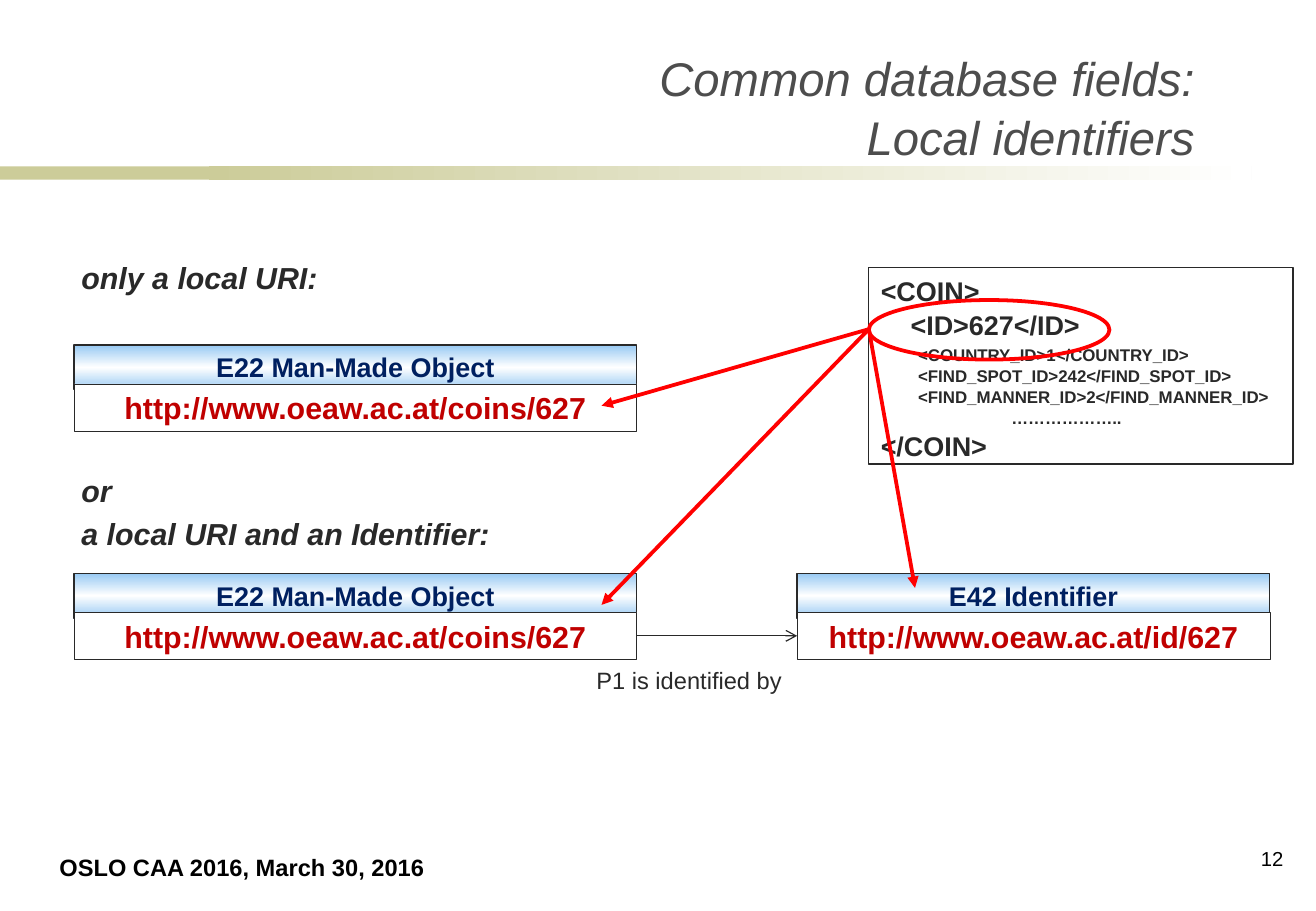
from copy import deepcopy

from pptx import Presentation, util as u
from pptx.dml.color import RGBColor
from pptx.enum import shapes, text
from pptx.oxml import ns, xmlchemy as xml

HUES = {"ink": "292929", "title": "4D4D4D", "black": "000000", "navy": "002060",
        "link": "C00000", "red": "FF0000", "sand": "CCCC99", "sky": "97C9F3",
        "white": "FFFFFF"}
HUES = {name: RGBColor.from_string(code) for name, code in HUES.items()}
SIDES = {"left": text.PP_ALIGN.LEFT, "right": text.PP_ALIGN.RIGHT,
         "mid": text.PP_ALIGN.CENTER}
TOP, MIDDLE, BOTTOM = (text.MSO_ANCHOR.TOP, text.MSO_ANCHOR.MIDDLE,
                       text.MSO_ANCHOR.BOTTOM)


def write(shape, lines, size, hue="ink", bold=False, slant=False, side="left",
          anchor=TOP, wrap=True, pitch=None, gaps=None):
    """Fill a shape with one paragraph per line; size may be a list."""
    frame = shape.text_frame
    frame.word_wrap = wrap
    frame.auto_size = text.MSO_AUTO_SIZE.NONE
    frame.vertical_anchor = anchor
    sizes = size if isinstance(size, list) else [size] * len(lines)
    gaps = gaps or [0] * len(lines)
    for i, line in enumerate(lines):
        para = frame.paragraphs[0] if i == 0 else frame.add_paragraph()
        para.alignment = SIDES[side]
        para.space_before = u.Pt(gaps[i])
        if pitch:
            para.line_spacing = pitch
        run = para.add_run()
        run.text = line
        run.font.name = "Arial"
        run.font.size = u.Pt(sizes[i])
        run.font.bold, run.font.italic = bold, slant
        run.font.color.rgb = HUES[hue]


def draw(kind, area, fills=(), line=None, weight=0.75, angle=0):
    """Add a shape with no fill, one plain fill, or a two-stop blend."""
    shape = slide.shapes.add_shape(kind, *map(u.Inches, area))
    shape.shadow.inherit = False
    if len(fills) == 2:
        shape.fill.gradient()
        shape.fill.gradient_angle = angle
        for stop, hue in zip(shape.fill.gradient_stops, fills):
            stop.color.rgb = HUES[hue]
    elif fills:
        shape.fill.solid()
        shape.fill.fore_color.rgb = HUES[fills[0]]
    else:
        shape.fill.background()
    if line:
        shape.line.color.rgb = HUES[line]
        shape.line.width = u.Pt(weight)
    else:
        shape.line.fill.background()
    return shape


deck = Presentation()
deck.slide_width, deck.slide_height = u.Inches(10.83), u.Inches(7.5)
slide = deck.slides.add_slide(deck.slide_layouts[1])
RECT, OVAL = shapes.MSO_SHAPE.RECTANGLE, shapes.MSO_SHAPE.OVAL

# Header band
draw(RECT, (0, 1.37, 2.53, 0.11), ["sand"])
draw(RECT, (1.72, 1.37, 8.58, 0.11), ["sand", "white"])

# Title and body
title, body = slide.placeholders
for holder, area in ((title, (2.11, 0.13, 7.82, 1.28)),
                     (body, (0.57, 2.08, 10.12, 4.74))):
    holder.left, holder.top, holder.width, holder.height = map(u.Inches, area)
write(title, ["Common database fields:", "Local identifiers"], 28, "title",
      slant=True, side="right", anchor=BOTTOM, pitch=1.04)
write(body, ["only a local URI:", "or", "a local URI and an Identifier:"], 18,
      bold=True, slant=True, gaps=[0, 105, 4])
for para in body.text_frame.paragraphs:
    props = para._p.get_or_add_pPr()
    props.set("marL", "0")
    props.set("indent", "0")
    props.append(xml.OxmlElement("a:buNone"))

# Plain labels
labels = [
    ((0.39, 6.97, 3.22, 0.34), "OSLO CAA 2016, March 30, 2016",
     dict(size=14, hue="black", bold=True, wrap=False)),
    ((10.17, 6.92, 0.49, 0.42), "12", dict(size=12, hue="black", side="right")),
    ((4.81, 5.43, 1.74, 0.34), "P1 is identified by", dict(size=14, wrap=False)),
]
for area, label, form in labels:
    write(slide.shapes.add_textbox(*map(u.Inches, area)), [label], **form)

# Coin record
coin = draw(RECT, (7.15, 2.2, 3.49, 1.62), line="ink")
write(coin, ["<COIN>",
             "    <ID>627</ID>",
             "        <COUNTRY_ID>1</COUNTRY_ID>",
             "        <FIND_SPOT_ID>242</FIND_SPOT_ID>",
             "        <FIND_MANNER_ID>2</FIND_MANNER_ID>",
             "                            ………………..",
             "</COIN>"],
      [16, 16, 10, 10, 10, 10, 16], bold=True, pitch=1.04,
      gaps=[0, 0, 2, 0, 0, 0, 0])
draw(OVAL, (7.15, 2.47, 1.98, 0.49), line="red", weight=2.25)

# Entity cards: a shaded class bar above a link
links = []
for left, top, width, name, link in (
        (0.61, 2.84, 4.63, "E22 Man-Made Object", "http://www.oeaw.ac.at/coins/627"),
        (0.61, 4.72, 4.63, "E22 Man-Made Object", "http://www.oeaw.ac.at/coins/627"),
        (6.56, 4.72, 3.89, "E42 Identifier", "http://www.oeaw.ac.at/id/627")):
    bar = draw(RECT, (left, top, width, 0.37), ["sky", "white"], "ink", angle=90)
    stops = bar._element.spPr.find(".//" + ns.qn("a:gsLst"))
    last = deepcopy(stops[0])
    last.set("pos", "100000")
    stops[1].set("pos", "50000")
    stops.append(last)
    bar.text_frame.margin_left = bar.text_frame.margin_right = u.Inches(0.06)
    write(bar, [name], 16, "navy", bold=True, side="mid")
    cell = draw(RECT, (left, top + 0.32, width, 0.39), ["white"], "ink", 0.25)
    write(cell, [link], 18, "link", bold=True, side="mid", anchor=MIDDLE)
    links.append(cell)

# Arrows: three from the ID, one between the lower cards
start = (7.15, 2.71)
for head, tail, hue, weight, tip in (
        (start, (4.95, 3.34), "red", 2.25, "triangle"),
        (start, (7.53, 4.84), "red", 2.25, "triangle"),
        (start, (4.95, 4.98), "red", 2.25, "triangle"),
        ((5.24, 5.23), (6.56, 5.23), "ink", 0.75, "arrow")):
    arrow = slide.shapes.add_connector(shapes.MSO_CONNECTOR.STRAIGHT,
                                       *map(u.Inches, head + tail))
    arrow.line.color.rgb = HUES[hue]
    arrow.line.width = u.Pt(weight)
    end = xml.OxmlElement("a:tailEnd")
    end.set("type", tip)
    props = arrow._element.spPr
    props.find(ns.qn("a:ln")).append(end)
    props.append(xml.OxmlElement("a:effectLst"))
arrow.begin_connect(links[1], 3)
arrow.end_connect(links[2], 1)

deck.save("out.pptx")
